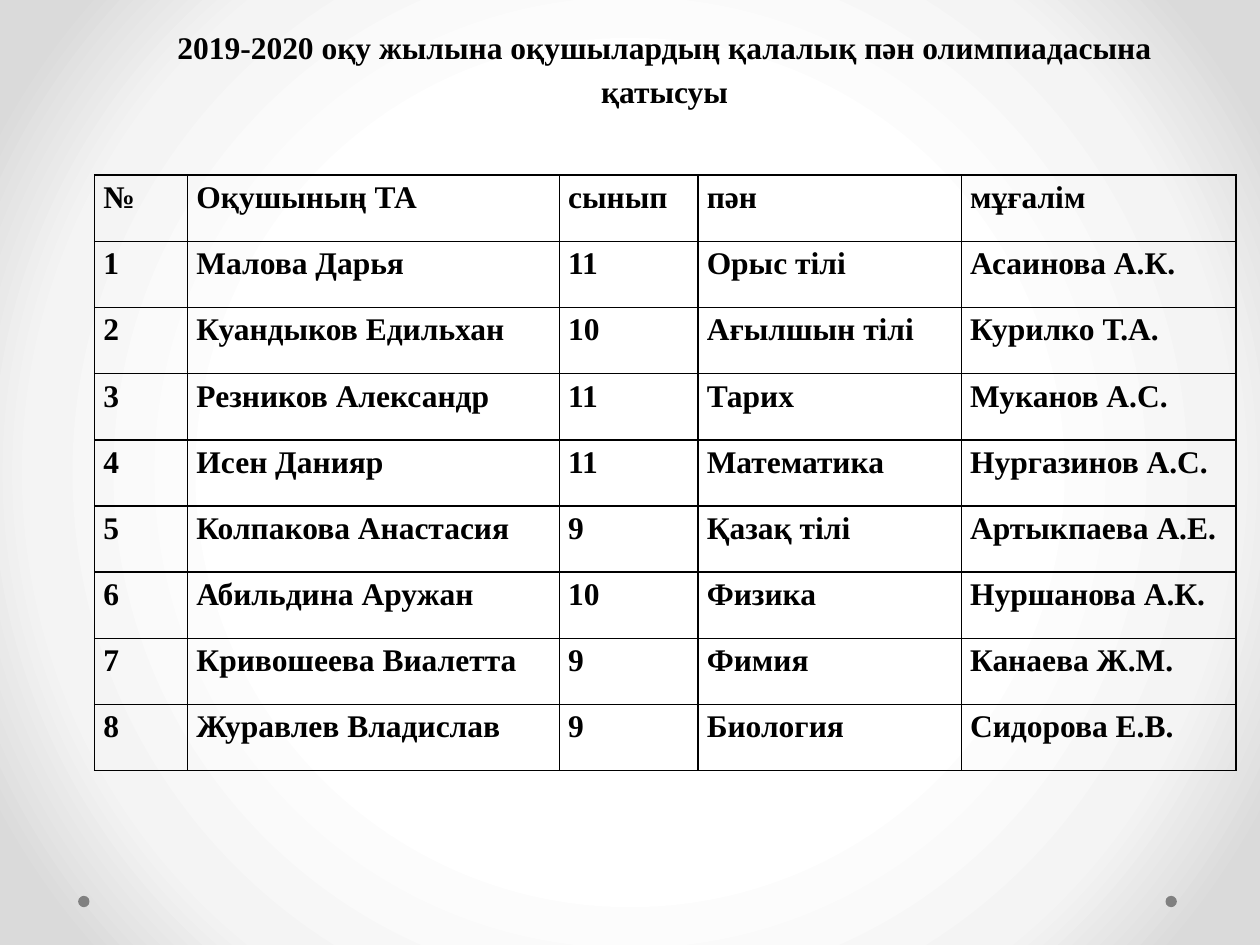
from dataclasses import dataclass

from pptx import Presentation, util as u
from pptx.dml.color import RGBColor
from pptx.enum import shapes, text
from pptx.oxml import parse_xml
from pptx.oxml.ns import nsdecls, qn

TITLE = "2019-2020 оқу жылына оқушылардың қалалық пән олимпиадасына қатысуы"
HEADER = ("№", "Оқушының ТА", "сынып", "пән", "мұғалім")
PUPILS = [
    ("Малова Дарья", 11, "Орыс тілі", "Асаинова А.К."),
    ("Куандыков Едильхан", 10, "Ағылшын тілі", "Курилко Т.А."),
    ("Резников Александр", 11, "Тарих", "Муканов А.С."),
    ("Исен Данияр", 11, "Математика", "Нургазинов А.С."),
    ("Колпакова Анастасия", 9, "Қазақ тілі", "Артыкпаева А.Е."),
    ("Абильдина Аружан", 10, "Физика", "Нуршанова А.К."),
    ("Кривошеева Виалетта", 9, "Фимия", "Канаева Ж.М."),
    ("Журавлев Владислав", 9, "Биология", "Сидорова Е.В."),
]
ROWS = [HEADER] + [(number, *pupil) for number, pupil in enumerate(PUPILS, 1)]

SLIDE_SIZE = (10, 7.5)
TITLE_BOX = (1.06, 0.13, 8.43, 0.8)
TABLE_BOX = (0.75, 1.39, 9.06, 4.73)
COLUMN_WIDTHS = (0.74, 2.95, 1.1, 2.09, 2.18)
DOT_LEFTS, DOT_TOP, DOT_SIZE = (0.62, 9.25), 7.11, 0.09


@dataclass(frozen=True)
class Theme:
    font: str = "Times New Roman"
    size: int = 18
    line_spacing: float = 1.15
    ink: str = "000000"
    dot: str = "808080"
    border_width: int = 1
    background: tuple = ((50, "FFFFFF"), (76, "F4F4F4"), (92, "DADADA"))


THEME = Theme()


def inches(values):
    return [u.Inches(value) for value in values]


def style_paragraph(paragraph):
    paragraph.line_spacing = THEME.line_spacing
    font = paragraph.font
    font.name, font.size, font.bold = THEME.font, u.Pt(THEME.size), True
    font.color.rgb = RGBColor.from_string(THEME.ink)


def paint_background(slide):
    """Fill the background with a gradient that spreads from the centre."""
    slide.background.fill.solid()
    stops = "".join(
        f'<a:gs pos="{share * 1000}"><a:srgbClr val="{color}"/></a:gs>'
        for share, color in THEME.background)
    gradient = parse_xml(
        f'<a:gradFill {nsdecls("a")} rotWithShape="1"><a:gsLst>{stops}</a:gsLst>'
        '<a:path path="circle"><a:fillToRect l="50000" t="50000" r="50000" b="50000"/>'
        '</a:path></a:gradFill>')
    properties = next(slide.element.iter(qn("p:bgPr")))
    properties.replace(properties[0], gradient)


def add_dots(slide):
    for left in DOT_LEFTS:
        dot = slide.shapes.add_shape(
            shapes.MSO_SHAPE.OVAL, *inches((left, DOT_TOP, DOT_SIZE, DOT_SIZE)))
        dot.shadow.inherit = False
        dot.fill.solid()
        dot.fill.fore_color.rgb = RGBColor.from_string(THEME.dot)
        dot.line.fill.background()


def fill_title(slide):
    title = slide.shapes.title
    title.left, title.top, title.width, title.height = inches(TITLE_BOX)
    frame = title.text_frame
    frame.text = TITLE
    frame.word_wrap = True
    frame.vertical_anchor = text.MSO_ANCHOR.TOP
    frame.auto_size = text.MSO_AUTO_SIZE.SHAPE_TO_FIT_TEXT
    paragraph = frame.paragraphs[0]
    style_paragraph(paragraph)
    paragraph.alignment = text.PP_ALIGN.CENTER
    paragraph.space_before, paragraph.space_after = u.Pt(0), u.Pt(10)


def add_borders(cell):
    properties = cell._tc.get_or_add_tcPr()
    for index, side in enumerate(("lnL", "lnR", "lnT", "lnB")):
        properties.insert(index, parse_xml(
            f'<a:{side} {nsdecls("a")} w="{u.Pt(THEME.border_width)}"><a:solidFill>'
            f'<a:srgbClr val="{THEME.ink}"/></a:solidFill></a:{side}>'))


def add_results_table(slide):
    table = slide.shapes.add_table(
        len(ROWS), len(HEADER), *inches(TABLE_BOX)).table
    table.first_row = table.horz_banding = False
    for column, width in zip(table.columns, COLUMN_WIDTHS):
        column.width = u.Inches(width)
    for row, values in zip(table.rows, ROWS):
        row.height = u.Inches(TABLE_BOX[3] / len(ROWS))
        for cell, value in zip(row.cells, values):
            cell.text = str(value)
            cell.margin_left = cell.margin_right = u.Inches(0.07)
            cell.margin_top = cell.margin_bottom = 0
            cell.fill.background()
            add_borders(cell)
            style_paragraph(cell.text_frame.paragraphs[0])


def main():
    presentation = Presentation()
    presentation.slide_width, presentation.slide_height = inches(SLIDE_SIZE)
    slide = presentation.slides.add_slide(
        presentation.slide_layouts.get_by_name("Title Only"))
    paint_background(slide)
    add_dots(slide)
    fill_title(slide)
    add_results_table(slide)
    presentation.save("out.pptx")


if __name__ == "__main__":
    main()
